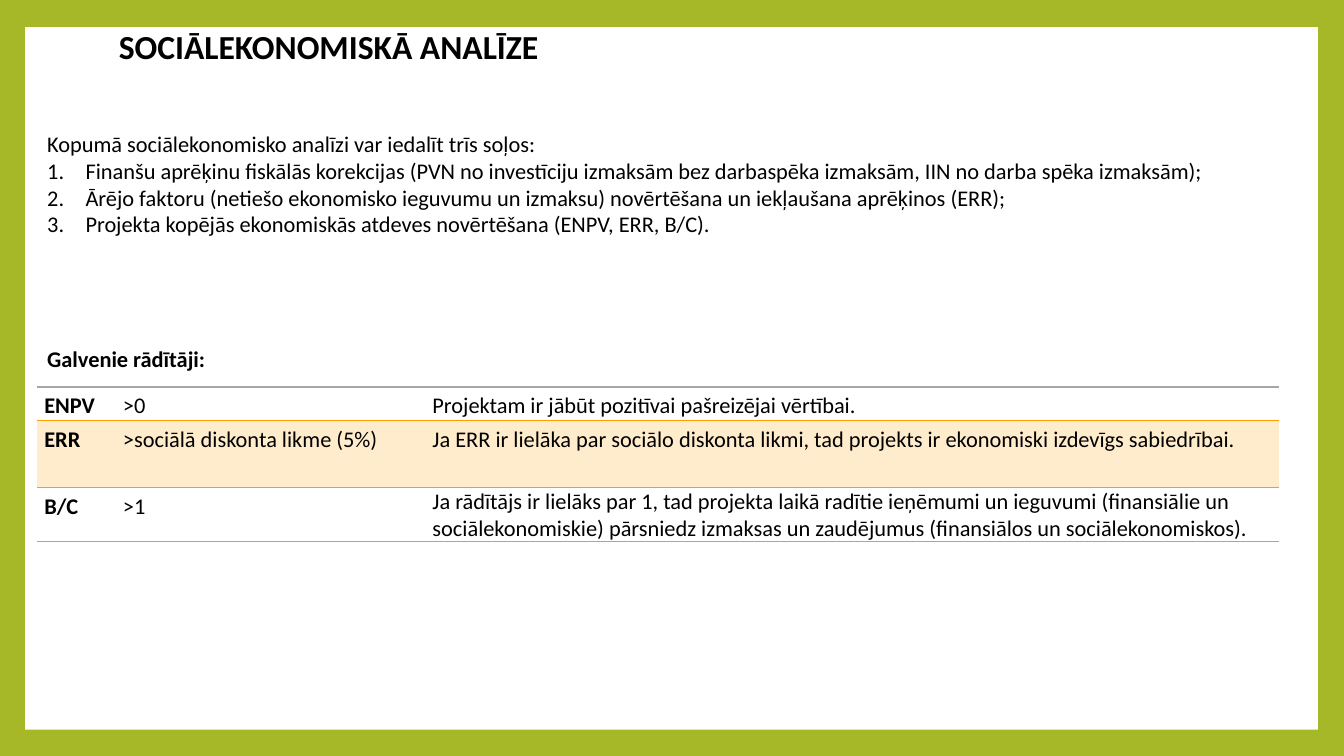
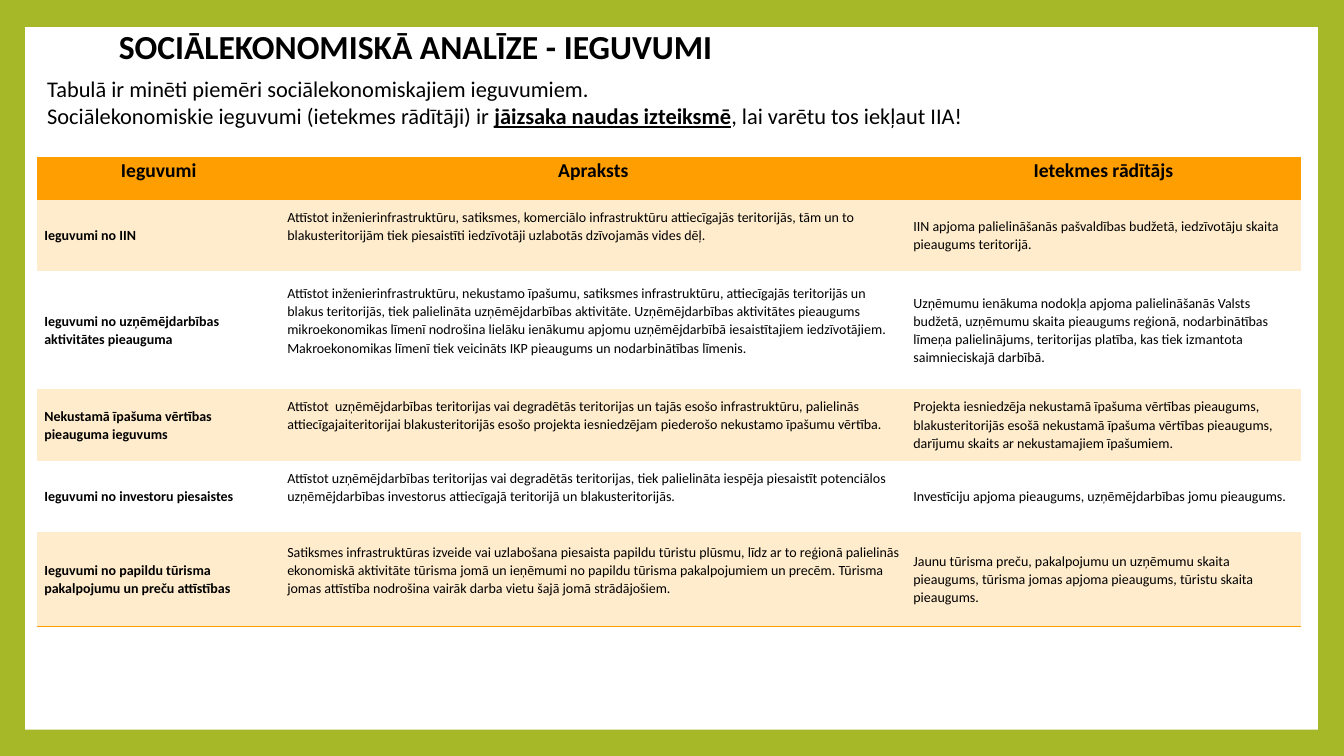
from lxml import etree
from pptx import Presentation
from pptx.dml.color import RGBColor
from pptx.enum.shapes import MSO_SHAPE
from pptx.enum.text import MSO_ANCHOR, PP_ALIGN
from pptx.oxml.ns import qn
from pptx.util import Inches, Pt

RECTANGLE = MSO_SHAPE.RECTANGLE
TOP, MIDDLE = MSO_ANCHOR.TOP, MSO_ANCHOR.MIDDLE
LEFT, CENTER, JUSTIFY = PP_ALIGN.LEFT, PP_ALIGN.CENTER, PP_ALIGN.JUSTIFY

GREEN, WHITE, BLACK = "A6B727", "FFFFFF", "000000"
ORANGE, PALE_ORANGE, GREY = "FE9E00", "FFECCC", "A6A6A6"
FONT = "Calibri"
NO_GRID_STYLE = "{2D5ABB26-0587-4C30-8999-92F81FD0307C}"

BODY_LEFT, BODY_WIDTH = 0.37, 12.18


def rgb(hex_color):
    return RGBColor.from_string(hex_color)


class Deck:
    """Holds the shared style and the slide being built."""

    def __init__(self):
        self.prs = Presentation()
        self.prs.slide_width, self.prs.slide_height = Inches(13.33), Inches(7.5)
        self.slide = None

    def new_slide(self, title):
        self.slide = self.prs.slides.add_slide(self.prs.slide_layouts[6])
        background = self.slide.background.fill
        background.solid()
        background.fore_color.rgb = rgb(GREEN)
        panel = self.slide.shapes.add_shape(
            RECTANGLE, Inches(0.25), Inches(0.27), Inches(12.82), Inches(6.97))
        panel.shadow.inherit = False
        panel.fill.solid()
        panel.fill.fore_color.rgb = rgb(WHITE)
        panel.line.fill.background()
        self.text((1.08, 0.27, 11.6, 0.43), [title], 24, MIDDLE,
                  {"line_spacing": 0.9}, bold=True)

    def fill_paragraph(self, paragraph, content, layout, **font):
        """Fill a paragraph with a string or a list of (string, font format) runs."""
        for name, value in layout.items():
            setattr(paragraph, name, value)
        runs = [(content, {})] if isinstance(content, str) else content
        for words, extra in runs:
            run = paragraph.add_run()
            run.text = words
            for name, value in {"name": FONT, **font, **extra}.items():
                setattr(run.font, name, value)
            run.font.color.rgb = rgb(BLACK)

    def text(self, box, paragraphs, size=16, anchor=TOP, layout=None, bold=False):
        frame = self.slide.shapes.add_textbox(*map(Inches, box)).text_frame
        frame.word_wrap = True
        frame.vertical_anchor = anchor
        for index, content in enumerate(paragraphs):
            paragraph = frame.add_paragraph() if index else frame.paragraphs[0]
            self.fill_paragraph(paragraph, content, layout or {},
                                size=Pt(size), bold=bold)
        return frame

    def number(self, paragraphs):
        for paragraph in paragraphs:
            properties = paragraph._p.get_or_add_pPr()
            properties.set("marL", str(Inches(0.38)))
            properties.set("indent", str(-Inches(0.38)))
            etree.SubElement(properties, qn("a:buAutoNum"), type="arabicPeriod")

    def table(self, top, widths, heights, header=False):
        frame = self.slide.shapes.add_table(
            len(heights), len(widths), Inches(BODY_LEFT), Inches(top),
            Inches(sum(widths)), Inches(sum(heights)))
        next(frame.element.iter(qn("a:tableStyleId"))).text = NO_GRID_STYLE
        table = frame.table
        table.first_row, table.horz_banding = header, False
        for column, width in zip(table.columns, widths):
            column.width = Inches(width)
        for row, height in zip(table.rows, heights):
            row.height = Inches(height)
        return table

    def cell(self, cell, words, layout, fill=None, borders=None, anchor=TOP,
             bottom=0, **font):
        margins = {"margin_left": 0.07, "margin_right": 0.07,
                   "margin_top": 0, "margin_bottom": bottom}
        for name, value in margins.items():
            setattr(cell, name, Inches(value))
        cell.vertical_anchor = anchor
        self.fill_paragraph(cell.text_frame.paragraphs[0], words, layout, **font)
        # Borders come before the fill in the cell properties
        properties = cell._tc.get_or_add_tcPr()
        for side, color in (borders or {}).items():
            line = etree.SubElement(properties, qn(f"a:ln{side}"), w=str(Pt(1)))
            solid = etree.SubElement(line, qn("a:solidFill"))
            etree.SubElement(solid, qn("a:srgbClr"), val=color)
        if fill:
            cell.fill.solid()
            cell.fill.fore_color.rgb = rgb(fill)
        else:
            cell.fill.background()


INDICATORS = [
    ("ENPV", ">0", "Projektam ir jābūt pozitīvai pašreizējai vērtībai."),
    ("ERR", ">sociālā diskonta likme (5%)",
     "Ja ERR ir lielāka par sociālo diskonta likmi, tad projekts ir ekonomiski "
     "izdevīgs sabiedrībai."),
    ("B/C", ">1",
     "Ja rādītājs ir lielāks par 1, tad projekta laikā radītie ieņēmumi un ieguvumi "
     "(finansiālie un sociālekonomiskie) pārsniedz izmaksas un zaudējumus "
     "(finansiālos un sociālekonomiskos)."),
]

BENEFITS = [
    ("Ieguvumi", "Apraksts", "Ietekmes rādītājs"),
    ("Ieguvumi no IIN",
     "Attīstot inženierinfrastruktūru, satiksmes, komerciālo infrastruktūru "
     "attiecīgajās teritorijās, tām un to blakusteritorijām tiek piesaistīti "
     "iedzīvotāji uzlabotās dzīvojamās vides dēļ.",
     "IIN apjoma palielināšanās pašvaldības budžetā, iedzīvotāju skaita pieaugums "
     "teritorijā."),
    ("Ieguvumi no uzņēmējdarbības aktivitātes pieauguma",
     "Attīstot inženierinfrastruktūru, nekustamo īpašumu, satiksmes infrastruktūru, "
     "attiecīgajās teritorijās un blakus teritorijās, tiek palielināta "
     "uzņēmējdarbības aktivitāte. Uzņēmējdarbības aktivitātes pieaugums "
     "mikroekonomikas līmenī nodrošina lielāku ienākumu apjomu uzņēmējdarbībā "
     "iesaistītajiem iedzīvotājiem. Makroekonomikas līmenī tiek veicināts IKP "
     "pieaugums un nodarbinātības līmenis.",
     "Uzņēmumu ienākuma nodokļa apjoma palielināšanās Valsts budžetā, uzņēmumu "
     "skaita pieaugums reģionā, nodarbinātības līmeņa palielinājums, teritorijas "
     "platība, kas tiek izmantota saimnieciskajā darbībā."),
    ("Nekustamā īpašuma vērtības pieauguma ieguvums",
     "Attīstot  uzņēmējdarbības teritorijas vai degradētās teritorijas un tajās esošo "
     "infrastruktūru, palielinās attiecīgajaiteritorijai blakusteritorijās esošo "
     "projekta iesniedzējam piederošo nekustamo īpašumu vērtība.",
     "Projekta iesniedzēja nekustamā īpašuma vērtības pieaugums, blakusteritorijās "
     "esošā nekustamā īpašuma vērtības pieaugums, darījumu skaits ar nekustamajiem "
     "īpašumiem."),
    ("Ieguvumi no investoru piesaistes",
     "Attīstot uzņēmējdarbības teritorijas vai degradētās teritorijas, tiek "
     "palielināta iespēja piesaistīt potenciālos uzņēmējdarbības investorus "
     "attiecīgajā teritorijā un blakusteritorijās.",
     "Investīciju apjoma pieaugums, uzņēmējdarbības jomu pieaugums."),
    ("Ieguvumi no papildu tūrisma pakalpojumu un preču attīstības",
     "Satiksmes infrastruktūras izveide vai uzlabošana piesaista papildu tūristu "
     "plūsmu, līdz ar to reģionā palielinās ekonomiskā aktivitāte tūrisma jomā un "
     "ieņēmumi no papildu tūrisma pakalpojumiem un precēm. Tūrisma jomas attīstība "
     "nodrošina vairāk darba vietu šajā jomā strādājošiem.",
     "Jaunu tūrisma preču, pakalpojumu un uzņēmumu skaita pieaugums, tūrisma jomas "
     "apjoma pieaugums, tūristu skaita pieaugums."),
]


def build_analysis(deck):
    deck.new_slide("SOCIĀLEKONOMISKĀ ANALĪZE")

    # Three steps
    steps = deck.text((BODY_LEFT, 1.24, BODY_WIDTH, 1.18), [
        "Kopumā sociālekonomisko analīzi var iedalīt trīs soļos:",
        "Finanšu aprēķinu fiskālās korekcijas (PVN no investīciju izmaksām bez "
        "darbaspēka izmaksām, IIN no darba spēka izmaksām);",
        "Ārējo faktoru (netiešo ekonomisko ieguvumu un izmaksu) novērtēšana un "
        "iekļaušana aprēķinos (ERR);",
        "Projekta kopējās ekonomiskās atdeves novērtēšana (ENPV, ERR, B/C).",
    ])
    deck.number(steps.paragraphs[1:])

    # Main indicators
    deck.text((BODY_LEFT, 3.38, BODY_WIDTH, 0.37), ["Galvenie rādītāji:"], bold=True)
    table = deck.table(3.84, [0.78, 3.07, 8.47], [0.33, 0.67, 0.53])
    row_borders = [{"T": GREY, "B": ORANGE}, {"T": ORANGE}, {"B": GREY}]
    spaced = {"alignment": JUSTIFY, "line_spacing": 1.2}
    for r, row in enumerate(INDICATORS):
        for c, words in enumerate(row):
            deck.cell(table.cell(r, c), words,
                      {"alignment": LEFT} if (r, c) == (2, 2) else spaced,
                      fill=PALE_ORANGE if r == 1 else None,
                      borders=row_borders[r], size=Pt(16), bold=c == 0)


def build_benefits(deck):
    deck.new_slide("SOCIĀLEKONOMISKĀ ANALĪZE - IEGUVUMI")

    # Introduction
    deck.text((BODY_LEFT, 0.7, BODY_WIDTH, 0.64), [
        "Tabulā ir minēti piemēri sociālekonomiskajiem ieguvumiem.",
        [("Sociālekonomiskie ieguvumi (ietekmes rādītāji) ir ", {}),
         ("jāizsaka naudas izteiksmē", {"bold": True, "underline": True}),
         (", lai varētu tos iekļaut IIA!", {})],
    ])

    # Benefits with description and indicator
    table = deck.table(1.56, [2.41, 6.21, 3.91],
                       [0.42, 0.71, 1.17, 0.71, 0.71, 0.94], header=True)
    last = len(BENEFITS) - 1
    for r, row in enumerate(BENEFITS):
        for c, words in enumerate(row):
            if r == 0:
                style = {"fill": ORANGE, "borders": {"T": ORANGE, "B": ORANGE},
                         "size": Pt(14), "bold": True}
            else:
                style = {"fill": PALE_ORANGE if r % 2 else None,
                         "borders": {"B": ORANGE} if r == last else None,
                         "anchor": MIDDLE, "bottom": 0.19 if c == 1 else 0,
                         "size": Pt(10), "bold": c == 0}
            layout = {"alignment": LEFT if r else CENTER, "line_spacing": 1.07}
            deck.cell(table.cell(r, c), words, layout, **style)


def main():
    deck = Deck()
    build_analysis(deck)
    build_benefits(deck)
    deck.prs.save("out.pptx")


if __name__ == "__main__":
    main()
